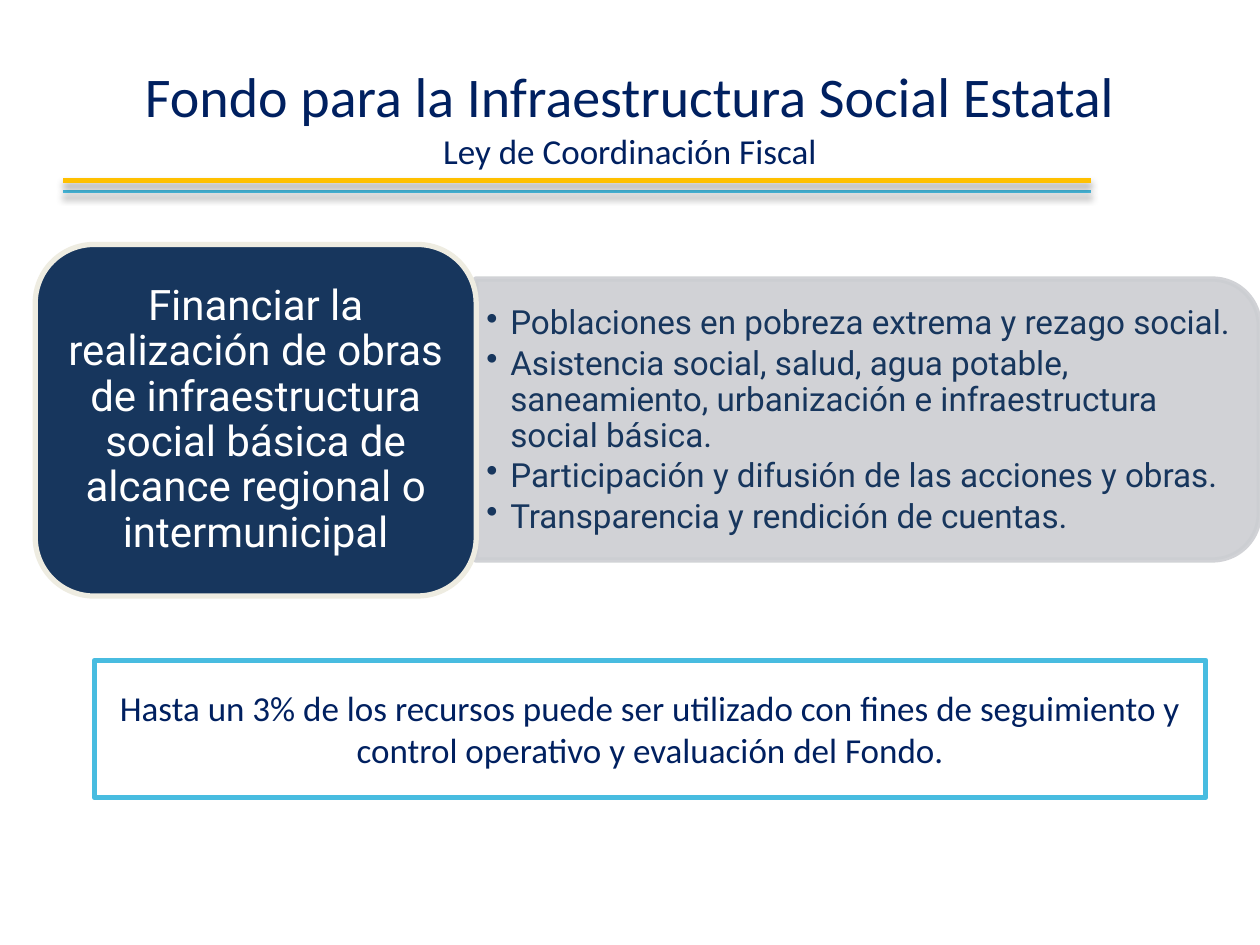
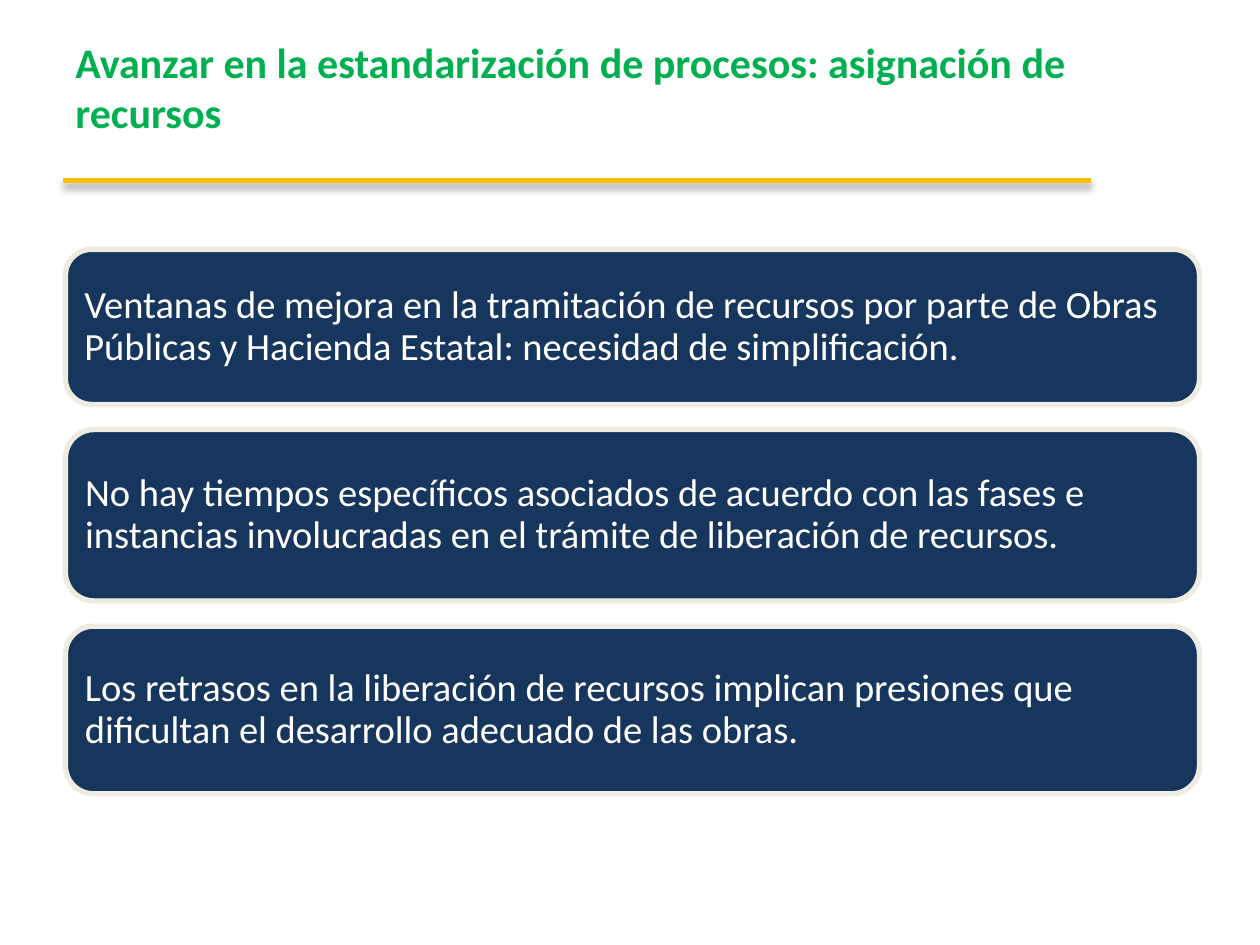
"""Build two slides on the state social infrastructure fund."""
from dataclasses import dataclass
from typing import Any

import lxml.etree
import pptx
import pptx.dml.color
import pptx.enum.shapes
import pptx.enum.text
import pptx.oxml.ns
import pptx.util

Inches = pptx.util.Inches
Pt = pptx.util.Pt
Align = pptx.enum.text.PP_ALIGN
Shape = pptx.enum.shapes.MSO_SHAPE
qn = pptx.oxml.ns.qn


@dataclass(frozen=True)
class Theme:
    navy: str = "002060"
    panel: str = "17365D"
    cream: str = "EEECE1"
    gray: str = "CCCED2"
    gold: str = "FFC000"
    sky: str = "48BCE0"
    green: str = "00B050"
    white: str = "FFFFFF"
    black: str = "000000"
    body: str = "Calibri"
    diagram: str = "Roboto"
    title: float = 32
    heading: float = 24
    statement: float = 22
    note: float = 20
    bullet: float = 19
    outline: float = 3
    thin: float = 1.5


THEME = Theme()


@dataclass(frozen=True)
class Box:
    left: float
    top: float
    width: float
    height: float

    def lengths(self) -> list[int]:
        return [Inches(v) for v in (self.left, self.top, self.width, self.height)]


@dataclass(frozen=True)
class Style:
    size: float
    color: str
    font: str = THEME.body
    bold: bool = False
    align: Any = Align.LEFT
    spacing: float = 1.0
    after: float = 0
    bullet_indent: float = 0


@dataclass(frozen=True)
class Rule:
    top: float
    color: str
    weight: float


TITLE_BOX = Box(0.5, 0.3, 9, 1.25)
GOLD_RULE = Rule(1.43, THEME.gold, THEME.outline)
SKY_RULE = Rule(1.52, THEME.sky, THEME.thin)


def rgb(color: str) -> Any:
    return pptx.dml.color.RGBColor.from_string(color)


def apply(target: Any, values: dict[str, Any]) -> None:
    for name, value in values.items():
        setattr(target, name, value)


def write(frame: Any, lines: list[tuple[str, Style]],
          inset_x: float = 0.1, inset_y: float = 0.05, bottom: float | None = None) -> None:
    apply(frame, {
        "word_wrap": True,
        "vertical_anchor": pptx.enum.text.MSO_ANCHOR.MIDDLE,
        "margin_left": Inches(inset_x),
        "margin_right": Inches(inset_x),
        "margin_top": Inches(inset_y),
        "margin_bottom": Inches(inset_y if bottom is None else bottom),
    })
    for index, (text, style) in enumerate(lines):
        paragraph = frame.add_paragraph() if index else frame.paragraphs[0]
        apply(paragraph, {"alignment": style.align, "line_spacing": style.spacing,
                          "space_after": Pt(style.after)})
        if style.bullet_indent:
            properties = paragraph._p.get_or_add_pPr()
            indent = Inches(style.bullet_indent)
            properties.set("marL", str(indent))
            properties.set("indent", str(-indent))
            lxml.etree.SubElement(properties, qn("a:buChar"), char="•")
        run = paragraph.add_run()
        run.text = text
        apply(run.font, {"size": Pt(style.size), "name": style.font, "bold": style.bold})
        run.font.color.rgb = rgb(style.color)


def add_text(slide: Any, box: Box, lines: list[tuple[str, Style]], **insets: float) -> None:
    write(slide.shapes.add_textbox(*box.lengths()).text_frame, lines, **insets)


def add_panel(slide: Any, kind: Any, box: Box, fill: str, line: str) -> Any:
    panel = slide.shapes.add_shape(kind, *box.lengths())
    panel.shadow.inherit = False
    panel.fill.solid()
    panel.fill.fore_color.rgb = rgb(fill)
    panel.line.color.rgb = rgb(line)
    panel.line.width = Pt(THEME.outline)
    return panel


def set_alpha(shape: Any, percent: int) -> None:
    for color in shape._element.spPr.iter(qn("a:srgbClr")):
        lxml.etree.SubElement(color, qn("a:alpha"), val=str(percent * 1000))


def add_rule(slide: Any, rule: Rule) -> None:
    line = slide.shapes.add_connector(
        pptx.enum.shapes.MSO_CONNECTOR.STRAIGHT,
        Inches(0.5), Inches(rule.top), Inches(8.66), Inches(rule.top))
    line.line.color.rgb = rgb(rule.color)
    line.line.width = Pt(rule.weight)
    effects = lxml.etree.SubElement(line._element.spPr, qn("a:effectLst"))
    shadow = lxml.etree.SubElement(
        effects, qn("a:outerShdw"), blurRad=str(Pt(4)), dist=str(Pt(3)),
        dir="5400000", rotWithShape="0")
    tint = lxml.etree.SubElement(shadow, qn("a:srgbClr"), val=THEME.black)
    lxml.etree.SubElement(tint, qn("a:alpha"), val="43000")


def build_fund(slide: Any) -> None:
    title = Style(THEME.title, THEME.navy, align=Align.CENTER)
    centered = Style(THEME.note, THEME.navy, align=Align.CENTER)
    add_text(slide, TITLE_BOX, [
        ("Fondo para la Infraestructura Social Estatal", title),
        ("Ley de Coordinación Fiscal", centered),
    ])
    for rule in (SKY_RULE, GOLD_RULE):
        add_rule(slide, rule)

    criteria = add_panel(slide, Shape.ROUND_2_SAME_RECTANGLE,
                         Box(5.77, 0.22, 2.23, 6.22), THEME.gray, THEME.gray)
    criteria.rotation = 90
    set_alpha(criteria, 90)
    criterion = Style(THEME.bullet, THEME.panel, THEME.diagram,
                      spacing=0.9, after=2.6, bullet_indent=0.19)
    add_text(slide, Box(3.78, 2.33, 6.11, 2.02), [(text, criterion) for text in (
        "Poblaciones en pobreza extrema y rezago social.",
        "Asistencia social, salud, agua potable, saneamiento, urbanización e "
        "infraestructura social básica.",
        "Participación y difusión de las acciones y obras.",
        "Transparencia y rendición de cuentas.",
    )], inset_x=0.08, inset_y=0.04)

    purpose = add_panel(slide, Shape.ROUNDED_RECTANGLE,
                        Box(0.28, 1.94, 3.5, 2.79), THEME.panel, THEME.cream)
    write(purpose.text_frame, [(
        "Financiar la realización de obras de infraestructura social básica de "
        "alcance regional o intermunicipal",
        Style(THEME.heading, THEME.white, THEME.diagram, align=Align.CENTER, spacing=0.9),
    )])

    limit = add_panel(slide, Shape.RECTANGLE, Box(0.75, 5.24, 8.82, 1.09),
                      THEME.white, THEME.sky)
    write(limit.text_frame, [(
        "Hasta un 3% de los recursos puede ser utilizado con fines de seguimiento y "
        "control operativo y evaluación del Fondo.", centered)])


def build_allocation(slide: Any) -> None:
    add_text(slide, TITLE_BOX, [(
        "Avanzar en la estandarización de procesos: asignación de recursos",
        Style(THEME.heading, THEME.green, bold=True))], bottom=0.52)
    add_rule(slide, GOLD_RULE)

    statement = Style(THEME.statement, THEME.white, spacing=0.9)
    top, gap = 1.98, 0.2
    for height, finding in (
        (1.23, "Ventanas de mejora en la tramitación de recursos por parte de Obras "
               "Públicas y Hacienda Estatal: necesidad de simplificación."),
        (1.36, "No hay tiempos específicos asociados de acuerdo con las fases e "
               "instancias involucradas en el trámite de liberación de recursos."),
        (1.33, "Los retrasos en la liberación de recursos implican presiones que "
               "dificultan el desarrollo adecuado de las obras."),
    ):
        panel = add_panel(slide, Shape.ROUNDED_RECTANGLE, Box(0.52, top, 9, height),
                          THEME.panel, THEME.cream)
        write(panel.text_frame, [(finding, statement)], inset_x=0.09, inset_y=0.09)
        top += height + gap


def main() -> None:
    deck = pptx.Presentation()
    apply(deck, {"slide_width": Inches(10), "slide_height": Inches(7.5)})
    for build in (build_fund, build_allocation):
        build(deck.slides.add_slide(deck.slide_layouts[6]))
    deck.save("out.pptx")


if __name__ == "__main__":
    main()
